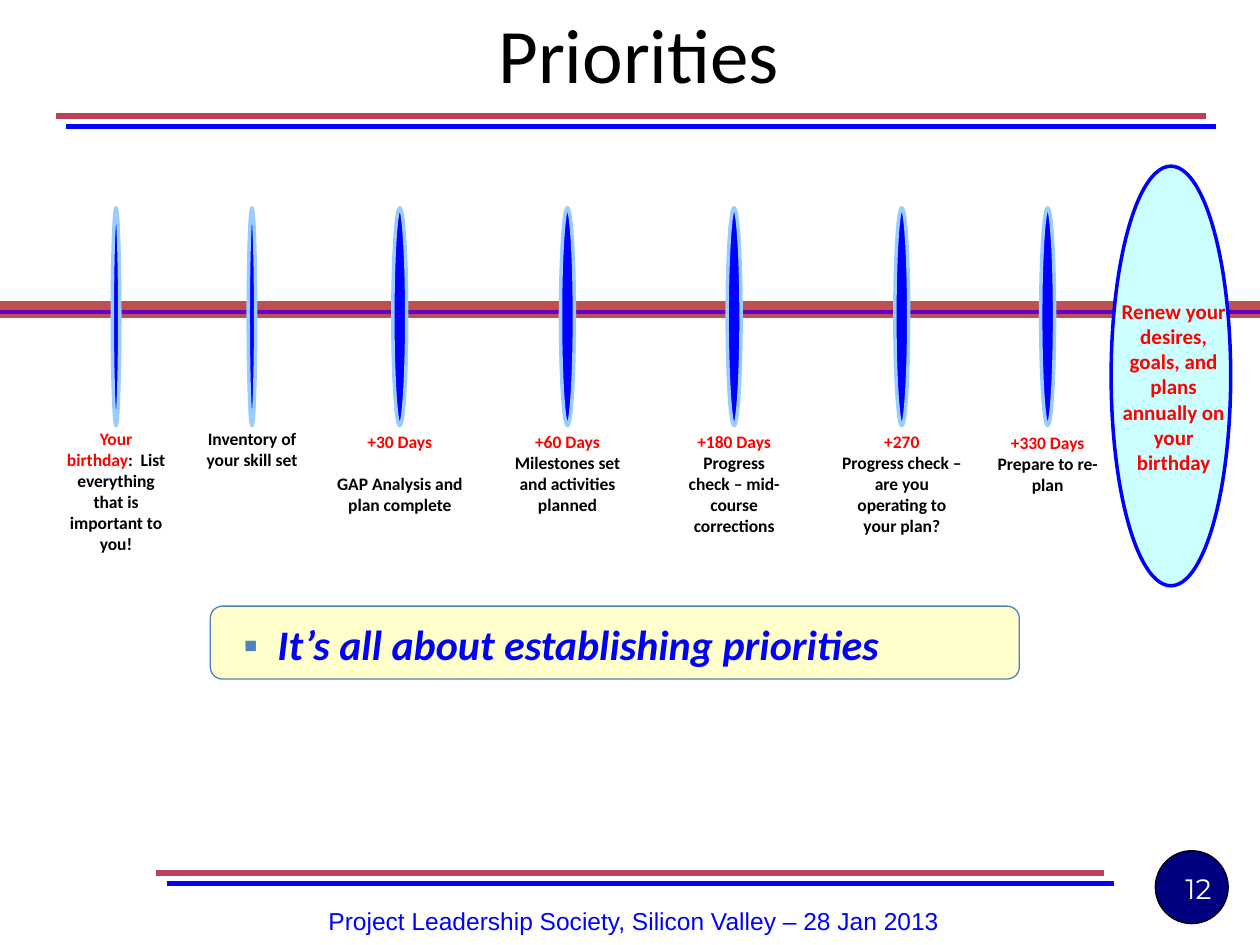
from lxml import etree
from pptx import Presentation
from pptx.dml.color import RGBColor
from pptx.enum.shapes import MSO_CONNECTOR, MSO_SHAPE
from pptx.enum.text import MSO_ANCHOR, MSO_AUTO_SIZE, PP_ALIGN
from pptx.oxml.ns import qn
from pptx.util import Cm, Pt

LINE = MSO_CONNECTOR.STRAIGHT
OVAL, ROUNDED = MSO_SHAPE.OVAL, MSO_SHAPE.ROUNDED_RECTANGLE
TOP, MIDDLE = MSO_ANCHOR.TOP, MSO_ANCHOR.MIDDLE
LEFT, CENTER, RIGHT = PP_ALIGN.LEFT, PP_ALIGN.CENTER, PP_ALIGN.RIGHT
NO_FIT = MSO_AUTO_SIZE.NONE

BLUE, RED, BLACK = "0000FF", "FF0000", "000000"


def rgb(value):
    return RGBColor.from_string(value)


class SlideBuilder:
    font = "Calibri"

    def __init__(self, slide):
        self.s = slide

    def run(self, p, text, size, color, bold=False, italic=False, font=None):
        r = p.add_run()
        r.text = text
        f = r.font
        f.name, f.size, f.bold, f.italic = font or self.font, Pt(size), bold, italic
        f.color.rgb = rgb(color)

    def line(self, x1, x2, y, color, width, shadow=None):
        c = self.s.shapes.add_connector(LINE, Cm(x1), Cm(y), Cm(x2), Cm(y))
        c.line.color.rgb = rgb(color)
        c.line.width = Pt(width)
        effects = etree.SubElement(c.element.spPr, qn("a:effectLst"))
        if shadow:
            outer = etree.SubElement(effects, qn("a:outerShdw"), dist=str(Pt(8.5)),
                                     dir="2700000", algn="ctr", rotWithShape="0")
            etree.SubElement(outer, qn("a:srgbClr"), val=shadow)

    def shape(self, kind, x, y, w, h, fill, line, width):
        sp = self.s.shapes.add_shape(kind, Cm(x), Cm(y), Cm(w), Cm(h))
        sp.shadow.inherit = False
        sp.fill.solid()
        sp.fill.fore_color.rgb = rgb(fill)
        sp.line.color.rgb = rgb(line)
        sp.line.width = Pt(width)

    def text(self, x, y, w, h, paragraphs, size, align=CENTER, anchor=TOP,
             bold=False, font=None, gap=0):
        """Each paragraph is a list of (text, color) runs."""
        tf = self.s.shapes.add_textbox(Cm(x), Cm(y), Cm(w), Cm(h)).text_frame
        tf.word_wrap = True
        tf.vertical_anchor = anchor
        for i, runs in enumerate(paragraphs):
            p = tf.add_paragraph() if i else tf.paragraphs[0]
            p.alignment = align
            if i and gap:
                p.space_before = Pt(gap)
            for text, color in runs:
                self.run(p, text, size, color, bold, font=font)

    def placeholder(self, sp, x, y, w, h, align):
        sp.left, sp.top, sp.width, sp.height = Cm(x), Cm(y), Cm(w), Cm(h)
        sp.element.getparent().append(sp.element)  # bring to front
        tf = sp.text_frame
        tf.word_wrap = True
        tf.auto_size = NO_FIT
        tf.vertical_anchor = MIDDLE
        p = tf.paragraphs[0]
        p.alignment = align
        p.space_before = Pt(0)
        return p

    def bullet(self, p, char, color, indent):
        pPr = p._p.get_or_add_pPr()
        pPr.set("marL", str(Cm(indent)))
        pPr.set("indent", str(-Cm(indent)))
        clr = etree.SubElement(pPr, qn("a:buClr"))
        etree.SubElement(clr, qn("a:srgbClr"), val=color)
        etree.SubElement(pPr, qn("a:buFont"), typeface="Arial")
        etree.SubElement(pPr, qn("a:buChar"), char=char)


# Milestones: centre, tick width, label top, label width, label lines, gap, text
MILESTONES = [
    (2.34, 0.15, 8.51, 2.51, 7, 0,
     [[("Your birthday", RED),
       (":  List everything that is important to you!", BLACK)]]),
    (5.08, 0.15, 8.51, 2.46, 3, 0, [[("Inventory of your skill set", BLACK)]]),
    (8.06, 0.28, 8.56, 3.4, 5, 12,
     [[("+30 Days", RED)], [("GAP Analysis and plan complete", BLACK)]]),
    (11.44, 0.28, 8.56, 2.97, 4, 0,
     [[("+60 Days", RED)], [("Milestones set and activities planned", BLACK)]]),
    (14.8, 0.28, 8.56, 2.54, 5, 0,
     [[("+180 Days", RED)], [("Progress check – mid-course corrections", BLACK)]]),
    (18.18, 0.28, 8.56, 2.97, 5, 0,
     [[("+270", RED)],
      [("Progress check – are you operating to your plan?", BLACK)]]),
    (21.12, 0.28, 8.59, 2.74, 3, 0,
     [[("+330 Days", RED)], [("Prepare to re-plan", BLACK)]]),
]


def main():
    prs = Presentation()
    prs.slide_width, prs.slide_height = Cm(25.4), Cm(19.05)
    s = prs.slides.add_slide(prs.slide_layouts[1])
    b = SlideBuilder(s)

    # Header and footer rules, footer text, page number
    b.text(3.33, 17.91, 18.9, 1.32,
           [[("Project Leadership Society, Silicon Valley – 28 Jan 2013", BLUE)]],
           14, anchor=MIDDLE, font="Arial")
    for x1, x2, y in [(3.15, 22.25, 17.6), (1.12, 24.31, 2.34)]:
        b.line(x1, x2, y, "BC415A", 3, shadow="0303FB")
    b.shape(OVAL, 23.29, 17.15, 1.47, 1.47, "000080", BLACK, 0.75)
    b.text(18.75, 17.45, 5.92, 1.32, [[("12", "FFFFFF")]], 16,
           align=RIGHT, font="Montserrat")

    # Timeline axis
    b.line(0, 25.4, 6.24, "C0504D", 10)
    b.line(0, 25.4, 6.29, "6600CC", 2)

    # Milestone ticks, each with its label centred below
    for x, tick, top, width, lines, gap, paragraphs in MILESTONES:
        b.shape(OVAL, x - tick / 2, 4.19, tick, 4.39, BLUE, "99CCFF", 2)
        b.text(x - width / 2, top, width, 0.25 + 0.42 * lines, paragraphs, 10,
               bold=True, gap=gap)

    # Annual renewal
    b.shape(OVAL, 22.4, 3.35, 2.41, 8.46, "CCFFFF", BLUE, 2)
    b.text(22.35, 5.89, 2.62, 4.32,
           [[("Renew your desires, goals, and plans annually on your birthday", RED)]],
           12, bold=True)

    # Key message
    b.shape(ROUNDED, 4.24, 12.22, 16.31, 1.47, "FFFFCC", "4F81BD", 0.75)
    p = b.placeholder(s.placeholders[1], 4.65, 12.42, 15.32, 1.22, LEFT)
    p.line_spacing = 0.95
    b.bullet(p, "▪", "4F81BD", 0.69)
    b.run(p, "It’s all about establishing priorities", 24, BLUE, True, True)

    # Title
    p = b.placeholder(s.shapes.title, 4.37, 0, 17.02, 2.11, CENTER)
    b.run(p, "Priorities", 44, BLACK)

    prs.save("out.pptx")


if __name__ == "__main__":
    main()
